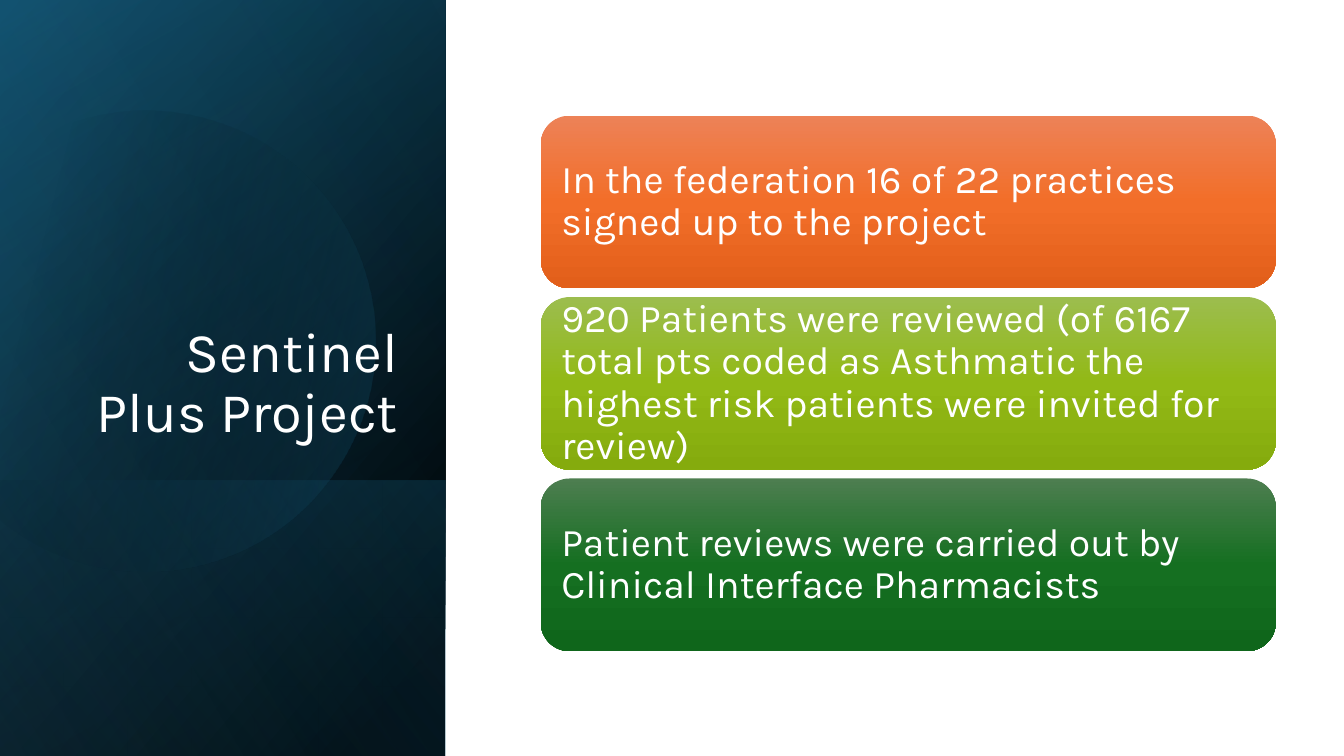
from dataclasses import dataclass
from math import cos, radians, sin, tan

from lxml import etree
from pptx import Presentation
from pptx.dml.color import RGBColor
from pptx.enum.shapes import MSO_SHAPE
from pptx.enum.text import MSO_ANCHOR, MSO_AUTO_SIZE, PP_ALIGN
from pptx.oxml.ns import qn
from pptx.util import Pt

RECT, ROUND_RECT = MSO_SHAPE.RECTANGLE, MSO_SHAPE.ROUNDED_RECTANGLE
LEFT, RIGHT = PP_ALIGN.LEFT, PP_ALIGN.RIGHT
MIDDLE, BOTTOM = MSO_ANCHOR.MIDDLE, MSO_ANCHOR.BOTTOM
NO_AUTOFIT = MSO_AUTO_SIZE.NONE
TITLE_ONLY = 5


@dataclass(frozen=True)
class Theme:
    font: str = "Karla"
    text: str = "FFFFFF"
    title_size: int = 40
    body_size: int = 28
    black: str = "000000"
    navy: str = "104862"
    teal: str = "156082"
    sky: str = "46B1E1"
    cards: tuple = (
        ("ED8257", "F26E29", "E25F1A"),
        ("9CBD4E", "92B916", "85AB0D"),
        ("4D7E50", "156F21", "0F661B"),
    )


THEME = Theme()

CARD_TEXTS = (
    "In the federation 16 of 22 practices signed up to the project",
    "920 Patients were reviewed (of 6167 total pts coded as Asthmatic "
    "the highest risk patients were invited for review)",
    "Patient reviews were carried out by Clinical Interface Pharmacists",
)


def fill_gradient(sp, stops, angle):
    """Fill with (position %, colour, opacity %) stops along a clockwise angle."""
    sp.shadow.inherit = False
    sp.line.fill.background()
    sp.fill.gradient()
    grad = sp._element.spPr.find(qn("a:gradFill"))
    for child in list(grad):
        grad.remove(child)
    stop_list = etree.SubElement(grad, qn("a:gsLst"))
    for position, color, opacity in stops:
        gs = etree.SubElement(stop_list, qn("a:gs"), pos=str(position * 1000))
        clr = etree.SubElement(gs, qn("a:srgbClr"), val=color)
        if opacity < 100:
            etree.SubElement(clr, qn("a:alpha"), val=str(opacity * 1000))
    etree.SubElement(grad, qn("a:lin"), ang=str(angle * 60000), scaled="0")


def write_text(sp, text, size, align, frame_format):
    tf = sp.text_frame
    for name, value in frame_format.items():
        setattr(tf, name, value)
    p = tf.paragraphs[0]
    p.alignment, p.line_spacing = align, 0.9
    r = p.add_run()
    r.text = text
    for name, value in {"name": THEME.font, "size": Pt(size), "bold": False}.items():
        setattr(r.font, name, value)
    r.font.color.rgb = RGBColor.from_string(THEME.text)


def add_turned_layer(slide, box, stops, angle):
    """Cover the box with a mirrored rectangle turned a quarter, so its gradient turns too."""
    x, y, w, h = box
    sp = slide.shapes.add_shape(
        RECT, Pt(x + (w - h) / 2), Pt(y + (h - w) / 2), Pt(h), Pt(w))
    sp.rotation = 90
    sp._element.spPr.find(qn("a:xfrm")).set("flipH", "1")
    fill_gradient(sp, stops, angle)


def add_disc(slide, box):
    """Draw a soft disc with its left side cut off, tilted so that the cut is upright."""
    x, y, _, _ = box
    radius, cx, cy = 164.5, x + 103.3, y + 240.8
    angles = [radians(a) for a in (-117.8, -90, 0, 90, 150.1)]
    points = [(cx + radius * cos(a), cy + radius * sin(a)) for a in angles]
    emu_points = [(Pt(px), Pt(py)) for px, py in points]
    builder = slide.shapes.build_freeform(*emu_points[0])
    builder.add_line_segments(emu_points[1:], close=True)
    sp = builder.convert_to_shape()

    # Bend each side between two anchors into an arc; the closing side stays straight.
    sides = list(sp._element.iter(qn("a:lnTo")))
    for side, a, b, start, end in zip(sides, angles, angles[1:], points, points[1:]):
        reach = radius * 4 / 3 * tan((b - a) / 4)
        handles = ((start[0] - reach * sin(a), start[1] + reach * cos(a)),
                   (end[0] + reach * sin(b), end[1] - reach * cos(b)), end)
        side.addprevious(curve := etree.Element(qn("a:cubicBezTo")))
        for px, py in handles:
            etree.SubElement(curve, qn("a:pt"), x=str(Pt(px) - sp.left),
                             y=str(Pt(py) - sp.top))
        side.getparent().remove(side)
    sp.rotation = 343.9
    fill_gradient(sp, [(29, THEME.black, 0), (100, THEME.teal, 43)], 30)


def add_title_panel(slide, box):
    x, y, w, h = box
    t = THEME
    foot = 197
    add_turned_layer(slide, box, [(8, t.black, 100), (100, t.navy, 100)], 50)
    add_turned_layer(slide, box, [(0, t.black, 0), (99, t.teal, 46)], 30)
    add_turned_layer(slide, (x, y + h - foot, w, foot),
                     [(2, t.teal, 29), (100, t.black, 30)], 130)
    add_disc(slide, box)
    add_turned_layer(slide, box, [(0, t.black, 0), (99, t.sky, 11)], 120)

    title = slide.shapes.title
    slide.shapes._spTree.append(title._element)  # bring to the front
    frame = {"left": x + 46, "top": y + 132.8, "width": 245.5, "height": 188.6}
    for name, value in frame.items():
        setattr(title, name, Pt(value))
    write_text(title, "Sentinel Plus Project", t.title_size, RIGHT,
               {"vertical_anchor": BOTTOM, "word_wrap": True, "auto_size": NO_AUTOFIT})


def add_cards(slide, box):
    x, y, w, h = box
    gap = 6.3
    card_h = (h - gap * (len(CARD_TEXTS) - 1)) / len(CARD_TEXTS)
    inset = Pt(8.64)
    frame_format = {"vertical_anchor": MIDDLE, "word_wrap": True,
                    "margin_left": inset, "margin_right": inset,
                    "margin_top": inset, "margin_bottom": inset}
    for i, (text, colors) in enumerate(zip(CARD_TEXTS, THEME.cards)):
        sp = slide.shapes.add_shape(
            ROUND_RECT, Pt(x), Pt(y + i * (card_h + gap)), Pt(w), Pt(card_h))
        fill_gradient(sp, [(pos, c, 100) for pos, c in zip((0, 50, 100), colors)], 90)
        write_text(sp, text, THEME.body_size, LEFT, frame_format)


def main():
    prs = Presentation()
    prs.slide_width, prs.slide_height = Pt(960), Pt(540)
    slide = prs.slides.add_slide(prs.slide_layouts[TITLE_ONLY])
    add_title_panel(slide, (0, 0, 318.2, 540))
    add_cards(slide, (386.3, 82.6, 525, 382.5))
    prs.save("out.pptx")


if __name__ == "__main__":
    main()
